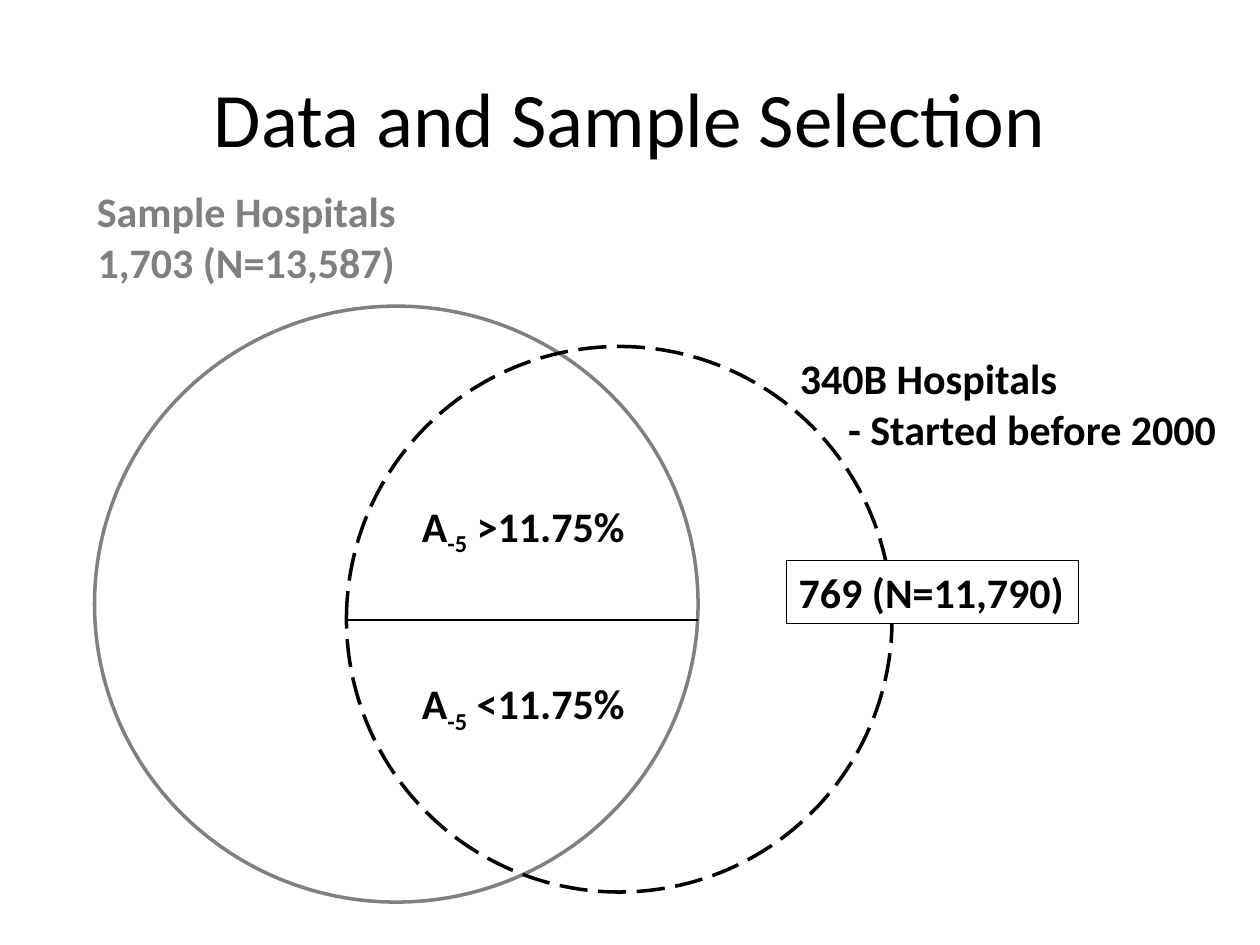
from pptx import Presentation
from pptx.dml.color import RGBColor
from pptx.enum.dml import MSO_LINE
from pptx.enum.shapes import MSO_CONNECTOR, MSO_SHAPE
from pptx.enum.text import MSO_ANCHOR, PP_ALIGN
from pptx.oxml.ns import qn
from pptx.util import Inches, Pt
from lxml.etree import SubElement

BLACK = RGBColor(0, 0, 0)
GRAY = RGBColor(0x80, 0x80, 0x80)
WHITE = RGBColor(0xFF, 0xFF, 0xFF)
FONT = "Calibri"


def add_run(paragraph, text, color=BLACK, size=24, bold=True, subscript=False):
    run = paragraph.add_run()
    run.text = text
    run.font.name = FONT
    run.font.size = Pt(size)
    run.font.bold = bold
    run.font.color.rgb = color
    if subscript:
        run._r.get_or_add_rPr().set("baseline", "-25000")


def add_text_box(slide, left, top, width, height, wrap=True):
    shape = slide.shapes.add_textbox(
        Inches(left), Inches(top), Inches(width), Inches(height))
    shape.text_frame.word_wrap = wrap
    return shape


def add_title(slide, text):
    frame = add_text_box(slide, 0.5, 0.3, 9, 1.25).text_frame
    frame.vertical_anchor = MSO_ANCHOR.MIDDLE
    paragraph = frame.paragraphs[0]
    paragraph.alignment = PP_ALIGN.CENTER
    add_run(paragraph, text, size=44, bold=False)


def add_circle(slide, left, top, width, height, color, dash=None):
    shape = slide.shapes.add_shape(
        MSO_SHAPE.OVAL, Inches(left), Inches(top), Inches(width), Inches(height))
    shape.shadow.inherit = False
    shape.fill.background()
    shape.line.color.rgb = color
    shape.line.width = Pt(2)
    if dash:
        shape.line.dash_style = dash


def add_sample_label(slide, top, text):
    paragraph = add_text_box(slide, 0.33, top, 3.25, 0.5).text_frame.paragraphs[0]
    paragraph.alignment = PP_ALIGN.CENTER
    add_run(paragraph, text, GRAY)


def add_program_label(slide):
    frame = add_text_box(slide, 6.25, 2.75, 3.5, 0.91).text_frame
    add_run(frame.paragraphs[0], "340B Hospitals")
    detail = frame.add_paragraph()
    detail.alignment = PP_ALIGN.RIGHT
    add_run(detail, "- Started before 2000")


def add_count_box(slide, text):
    shape = add_text_box(slide, 6.24, 4.45, 2.32, 0.5, wrap=False)
    shape.fill.solid()
    shape.fill.fore_color.rgb = WHITE
    shape.line.color.rgb = BLACK
    shape.line.width = Pt(0.75)
    add_run(shape.text_frame.paragraphs[0], text)


def add_divider(slide, left, right, y):
    connector = slide.shapes.add_connector(
        MSO_CONNECTOR.STRAIGHT, Inches(left), Inches(y), Inches(right), Inches(y))
    connector.line.color.rgb = BLACK
    connector.line.width = Pt(0.75)
    SubElement(connector._element.spPr, qn("a:effectLst"))


def add_threshold(slide, top, condition):
    frame = add_text_box(slide, 3.25, top, 1.85, 0.5, wrap=False).text_frame
    paragraph = frame.paragraphs[0]
    add_run(paragraph, "A")
    add_run(paragraph, "-5", subscript=True)
    add_run(paragraph, " " + condition)


def main():
    presentation = Presentation()
    presentation.slide_width = Inches(10)
    presentation.slide_height = Inches(7.5)
    slide = presentation.slides.add_slide(presentation.slide_layouts[6])

    add_title(slide, "Data and Sample Selection")
    add_circle(slide, 0.75, 2.43, 4.79, 4.73, GRAY)
    add_circle(slide, 2.75, 2.75, 4.33, 4.33, BLACK, MSO_LINE.LONG_DASH)
    add_sample_label(slide, 1.42, "Sample Hospitals")
    add_sample_label(slide, 1.83, "1,703 (N=13,587)")
    add_program_label(slide)
    add_count_box(slide, "769 (N=11,790)")
    add_divider(slide, 2.75, 5.54, 4.92)
    add_threshold(slide, 3.92, ">11.75%")
    add_threshold(slide, 5.33, "<11.75%")

    presentation.save("out.pptx")


if __name__ == "__main__":
    main()
